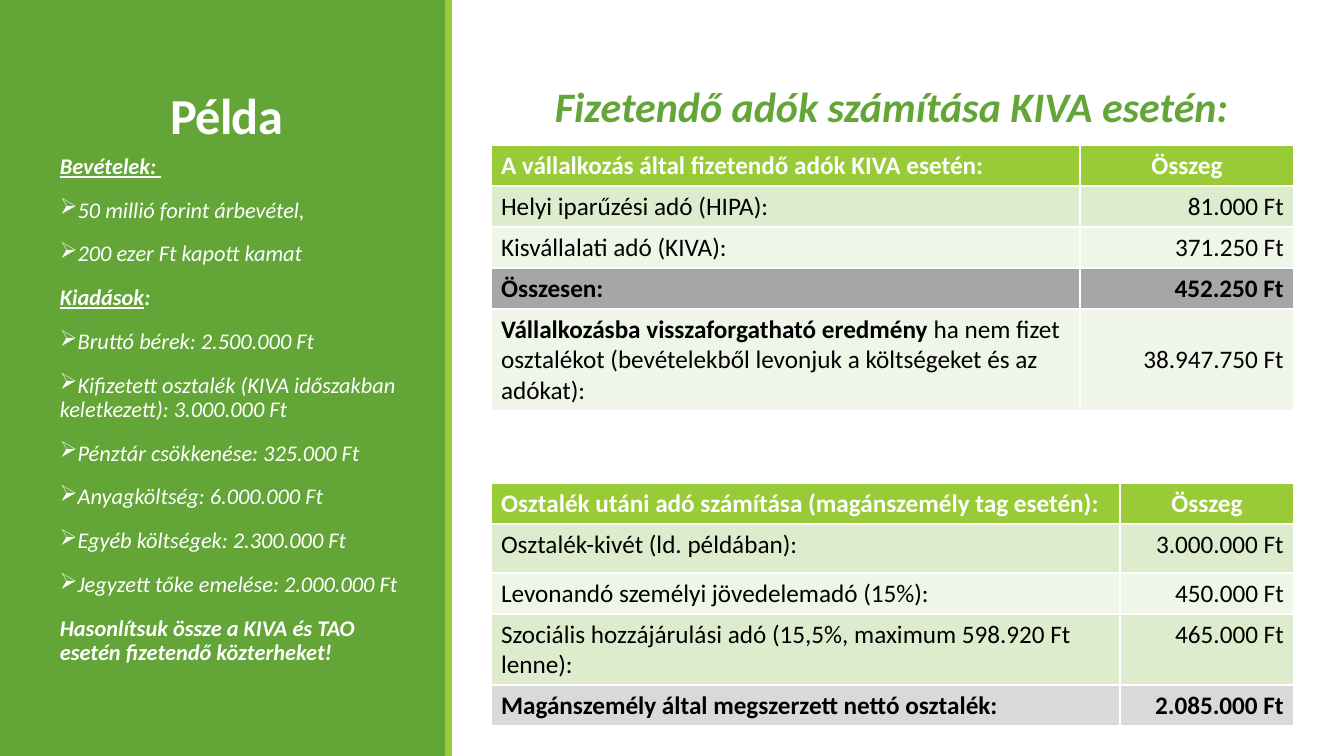
"""Build the slide comparing the taxes payable under KIVA."""
from dataclasses import dataclass

from lxml.etree import SubElement
from pptx import Presentation
from pptx.dml.color import RGBColor
from pptx.enum.shapes import MSO_SHAPE
from pptx.enum.text import MSO_ANCHOR, PP_ALIGN
from pptx.oxml.ns import qn
from pptx.slide import Slide
from pptx.text.text import TextFrame, _Paragraph
from pptx.util import Emu, Pt

SLIDE_WIDTH, SLIDE_HEIGHT = 1344, 756
EMU_PER_PX = 12192000 / SLIDE_WIDTH
FONT = "Calibri"
COLORS = {
    "green": "63A537",
    "lime": "99CB38",
    "band_dark": "DEECCE",
    "band_light": "EFF6E8",
    "total": "A6A6A6",
    "net": "D9D9D9",
    "white": "FFFFFF",
    "black": "000000",
}


@dataclass(frozen=True)
class Box:
    left: int
    top: int
    width: int
    height: int


@dataclass(frozen=True)
class Line:
    text: str
    bold: bool = False
    underlined: str = ""
    bullet: str = ""


@dataclass(frozen=True)
class Row:
    label: str
    amount: str
    fill: str
    height: int = 41
    bold: bool = False
    lead: str = ""
    amount_anchor: MSO_ANCHOR = MSO_ANCHOR.TOP


@dataclass(frozen=True)
class TaxTable:
    top: int
    widths: tuple[int, int]
    heading: str
    rows: tuple[Row, ...]


BANDS = (
    (Box(0, 0, 446, SLIDE_HEIGHT), "green"),
    (Box(445, 0, 7, SLIDE_HEIGHT), "lime"),
)
EXAMPLE_LINES = (
    Line("", True, underlined="Bevételek: "),
    Line("50 millió forint árbevétel,", bullet="➢"),
    Line("200 ezer Ft kapott kamat", bullet="➢"),
    Line(":", True, underlined="Kiadások"),
    Line("Bruttó bérek: 2.500.000 Ft", bullet="➢"),
    Line("Kifizetett osztalék (KIVA időszakban keletkezett): 3.000.000 Ft", bullet="➢"),
    Line("Pénztár csökkenése: 325.000 Ft", bullet="➢"),
    Line("Anyagköltség: 6.000.000 Ft", bullet="➢"),
    Line("Egyéb költségek: 2.300.000 Ft", bullet="➢"),
    Line("Jegyzett tőke emelése: 2.000.000 Ft", bullet="➢"),
    Line("Hasonlítsuk össze a KIVA és TAO esetén fizetendő közterheket!", True),
)
TABLE_LEFT = 491
TABLES = (
    TaxTable(483, (629, 174), "Osztalék utáni adó számítása (magánszemély tag esetén):", (
        Row("Osztalék-kivét (ld. példában):", "3.000.000 Ft", "band_dark", 49),
        Row("Levonandó személyi jövedelemadó (15%):", "450.000 Ft", "band_light"),
        Row("Szociális hozzájárulási adó (15,5%, maximum 598.920 Ft lenne):",
            "465.000 Ft", "band_dark", 71),
        Row("Magánszemély által megszerzett nettó osztalék:", "2.085.000 Ft", "net", bold=True),
    )),
    TaxTable(145, (589, 214), "A vállalkozás által fizetendő adók KIVA esetén:", (
        Row("Helyi iparűzési adó (HIPA):", "81.000 Ft", "band_dark"),
        Row("Kisvállalati adó (KIVA):", "371.250 Ft", "band_light"),
        Row("Összesen:", "452.250 Ft", "total", bold=True),
        Row("ha nem fizet osztalékot (bevételekből levonjuk a költségeket és az adókat):",
            "38.947.750 Ft", "band_light", 102,
            lead="Vállalkozásba visszaforgatható eredmény ", amount_anchor=MSO_ANCHOR.MIDDLE),
    )),
)


def px(length: int) -> Emu:
    return Emu(round(length * EMU_PER_PX))


def rgb(name: str) -> RGBColor:
    return RGBColor.from_string(COLORS[name])


def style(paragraph: _Paragraph, size: int, color: str, bold: bool | None = None,
          italic: bool = False, align: PP_ALIGN = PP_ALIGN.LEFT) -> None:
    paragraph.alignment = align
    font = paragraph.font
    font.name, font.size, font.bold, font.italic = FONT, Pt(size), bold, italic
    font.color.rgb = rgb(color)


def space(paragraph: _Paragraph) -> None:
    paragraph.line_spacing = 0.9
    paragraph.space_before, paragraph.space_after = Pt(12), Pt(2)


def add_bullet(paragraph: _Paragraph, character: str) -> None:
    properties = paragraph._p.get_or_add_pPr()
    bullet = SubElement(properties, qn("a:buChar"), char=character)
    default_font = properties.find(qn("a:defRPr"))
    if default_font is not None:
        default_font.addprevious(bullet)


def add_text_box(slide: Slide, box: Box) -> TextFrame:
    shape = slide.shapes.add_textbox(px(box.left), px(box.top), px(box.width), px(box.height))
    shape.text_frame.word_wrap = True
    return shape.text_frame


def add_band(slide: Slide, box: Box, color: str) -> None:
    shape = slide.shapes.add_shape(
        MSO_SHAPE.RECTANGLE, px(box.left), px(box.top), px(box.width), px(box.height))
    shape.shadow.inherit = False
    shape.fill.solid()
    shape.fill.fore_color.rgb = rgb(color)
    shape.line.fill.background()


def add_titles(slide: Slide) -> None:
    frame = add_text_box(slide, Box(50, 66, 353, 84))
    frame.vertical_anchor = MSO_ANCHOR.BOTTOM
    paragraph = frame.paragraphs[0]
    run = paragraph.add_run()
    run.text = "Példa"
    run._r.get_or_add_rPr().set("spc", "-50")
    style(paragraph, 36, "white", True, align=PP_ALIGN.CENTER)
    paragraph.line_spacing = 0.85

    frame = add_text_box(slide, Box(539, 81, 706, 60))
    frame.margin_left = frame.margin_right = 0
    paragraph = frame.paragraphs[0]
    paragraph.text = "Fizetendő adók számítása KIVA esetén:"
    style(paragraph, 30, "green", True, True, PP_ALIGN.CENTER)
    space(paragraph)


def add_example(slide: Slide) -> None:
    frame = add_text_box(slide, Box(50, 150, 374, 544))
    for index, line in enumerate(EXAMPLE_LINES):
        paragraph = frame.add_paragraph() if index else frame.paragraphs[0]
        for text, underline in ((line.underlined, True), (line.text, False)):
            if text:
                run = paragraph.add_run()
                run.text, run.font.underline = text, underline
        style(paragraph, 16, "white", line.bold, True)
        space(paragraph)
        if line.bullet:
            add_bullet(paragraph, line.bullet)


def add_tax_table(slide: Slide, tax: TaxTable) -> None:
    rows = (Row(tax.heading, "Összeg", "lime", bold=True), *tax.rows)
    table = slide.shapes.add_table(
        len(rows), 2, px(TABLE_LEFT), px(tax.top),
        px(sum(tax.widths)), px(sum(row.height for row in rows))).table
    for column, width in zip(table.columns, tax.widths):
        column.width = px(width)
    for index, row in enumerate(rows):
        table.rows[index].height = px(row.height)
        color = "black" if index else "white"
        amount_align = PP_ALIGN.RIGHT if index else PP_ALIGN.CENTER
        label_cell, amount_cell = table.cell(index, 0), table.cell(index, 1)
        amount_cell.vertical_anchor = row.amount_anchor
        for cell, text, align in ((label_cell, row.label, PP_ALIGN.LEFT),
                                  (amount_cell, row.amount, amount_align)):
            cell.fill.solid()
            cell.fill.fore_color.rgb = rgb(row.fill)
            paragraph = cell.text_frame.paragraphs[0]
            if row.lead and cell is label_cell:
                lead = paragraph.add_run()
                lead.text, lead.font.bold = row.lead, True
            paragraph.add_run().text = text
            style(paragraph, 18, color, row.bold, align=align)


def main() -> None:
    presentation = Presentation()
    presentation.slide_width, presentation.slide_height = px(SLIDE_WIDTH), px(SLIDE_HEIGHT)
    slide = presentation.slides.add_slide(presentation.slide_layouts[6])
    for box, color in BANDS:
        add_band(slide, box, color)
    add_titles(slide)
    add_example(slide)
    for tax in TABLES:
        add_tax_table(slide, tax)
    presentation.save("out.pptx")


if __name__ == "__main__":
    main()
